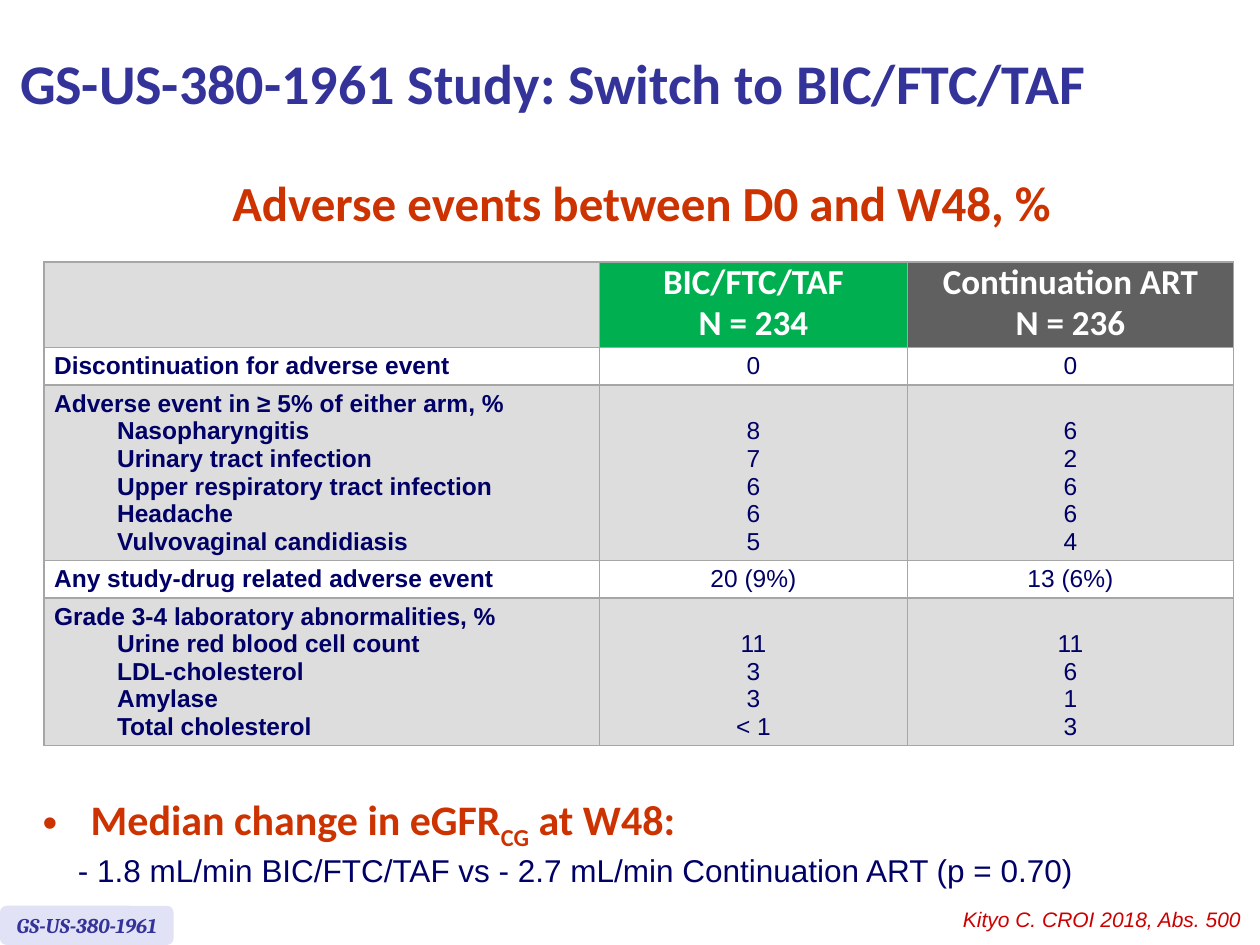
from dataclasses import dataclass
from typing import Any

from lxml.etree import SubElement
from pptx import Presentation
from pptx.dml.color import RGBColor
from pptx.enum.shapes import MSO_SHAPE as Preset
from pptx.enum.text import MSO_ANCHOR as Anchor, MSO_AUTO_SIZE as AutoSize, PP_ALIGN as Align
from pptx.oxml.ns import qn
from pptx.util import Cm, Pt

COLORS = {
    "title": "333399", "accent": "CC3300", "body": "000066", "citation": "CC0000",
    "tag": "E2E2F6", "border": "A6A6A6", "shade": "DDDDDD", "plain": "FFFFFF",
    "bictegravir": "00B050", "continuation": "606060",
}
FONTS = {
    "title": dict(name="Calibri", size=Pt(32), bold=True, color="title"),
    "heading": dict(name="Calibri", size=Pt(28), bold=True, color="accent"),
    "finding": dict(name="Calibri", size=Pt(24), bold=True, color="accent"),
    "detail": dict(name="Arial", size=Pt(18), bold=False, color="body"),
    "citation": dict(name="Arial", size=Pt(12), italic=True, color="citation"),
    "tag": dict(name="Cambria", size=Pt(12), bold=True, italic=True, color="title"),
    "arm": dict(name="Calibri", size=Pt(20), bold=True, color="plain"),
    "event": dict(name="Arial", size=Pt(14), bold=True, color="body"),
    "value": dict(name="Arial", size=Pt(14), bold=False, color="body"),
}


@dataclass
class Arm:
    name: str
    patients: int
    color: str


@dataclass
class EventGroup:
    label: str
    height: float
    fill: str
    events: tuple[str, ...]
    arm_values: tuple[tuple[str, ...], ...]


ARMS = [Arm("BIC/FTC/TAF", 234, "bictegravir"), Arm("Continuation ART", 236, "continuation")]
GROUPS = [
    EventGroup("Discontinuation for adverse event", 0.76, "plain", (), (("0",), ("0",))),
    EventGroup(
        "Adverse event in ≥ 5% of either arm, %", 3.4, "shade",
        ("Nasopharyngitis", "Urinary tract infection", "Upper respiratory tract infection",
         "Headache", "Vulvovaginal candidiasis"),
        (("8", "7", "6", "6", "5"), ("6", "2", "6", "6", "4"))),
    EventGroup("Any study-drug related adverse event", 0.76, "plain", (),
               (("20 (9%)",), ("13 (6%)",))),
    EventGroup(
        "Grade 3-4 laboratory abnormalities, %", 2.9, "shade",
        ("Urine red blood cell count", "LDL-cholesterol", "Amylase", "Total cholesterol"),
        (("11", "3", "3", "< 1"), ("11", "6", "1", "3"))),
]
COLUMN_WIDTHS = (11.2, 6.2, 6.58)
HEADER_HEIGHT = 1.4


def rgb(color: str) -> RGBColor:
    return RGBColor.from_string(COLORS[color])


def style(font: Any, role: str) -> None:
    for key, value in FONTS[role].items():
        if key == "color":
            font.color.rgb = rgb(value)
        else:
            setattr(font, key, value)


def write_lines(frame: Any, lines: tuple[str, ...], role: str, **paragraph_format: Any) -> list:
    """Write one paragraph per line, all in the same style, and return them."""
    paragraphs = []
    for index, line in enumerate(lines):
        paragraph = frame.add_paragraph() if index else frame.paragraphs[0]
        for key, value in paragraph_format.items():
            setattr(paragraph, key, value)
        run = paragraph.add_run()
        run.text = line
        style(run.font, role)
        paragraphs.append(paragraph)
    return paragraphs


def indent(paragraph: Any, left: float, first: float = 0, bullet: str = "") -> None:
    properties = paragraph._p.get_or_add_pPr()
    properties.set("marL", str(Cm(left)))
    properties.set("indent", str(Cm(first)))
    if bullet:
        SubElement(properties, qn("a:buFont"), typeface="Arial")
        SubElement(properties, qn("a:buChar"), char=bullet)


def add_text_frame(slide: Any, left: float, top: float, width: float, height: float) -> Any:
    frame = slide.shapes.add_textbox(Cm(left), Cm(top), Cm(width), Cm(height)).text_frame
    frame.word_wrap = True
    return frame


def format_cell(cell: Any, fill: str, anchor: Any = Anchor.MIDDLE) -> None:
    properties = cell._tc.get_or_add_tcPr()
    for side in ("lnL", "lnR", "lnT", "lnB"):
        line = SubElement(properties, qn(f"a:{side}"), w=str(Pt(1)))
        solid = SubElement(line, qn("a:solidFill"))
        SubElement(solid, qn("a:srgbClr"), val=COLORS["border"])
    cell.fill.solid()
    cell.fill.fore_color.rgb = rgb(fill)
    cell.vertical_anchor = anchor
    cell.margin_left = cell.margin_right = Cm(0.2)
    cell.margin_top = cell.margin_bottom = Cm(0.1)


def add_title(slide: Any) -> None:
    title = slide.shapes.title
    title.left, title.top, title.width, title.height = Cm(0.15), Cm(0.13), Cm(22.76), Cm(3.07)
    frame = title.text_frame
    frame.auto_size = AutoSize.NONE
    frame.vertical_anchor = Anchor.MIDDLE
    write_lines(frame, ("GS-US-380-1961 Study: Switch to BIC/FTC/TAF",), "title",
                alignment=Align.LEFT)


def add_events_table(slide: Any) -> None:
    graphic = slide.shapes.add_table(len(GROUPS) + 1, len(ARMS) + 1, Cm(0.89), Cm(5.28),
                                     Cm(sum(COLUMN_WIDTHS)), Cm(9.2))
    table = graphic.table
    table.first_row = table.horz_banding = False
    for column, width in zip(table.columns, COLUMN_WIDTHS):
        column.width = Cm(width)
    for row, height in zip(table.rows, [HEADER_HEIGHT, *(group.height for group in GROUPS)]):
        row.height = Cm(height)

    format_cell(table.cell(0, 0), "shade")
    for column, arm in enumerate(ARMS, start=1):
        cell = table.cell(0, column)
        format_cell(cell, arm.color)
        _, count = write_lines(cell.text_frame, (arm.name, f"N = {arm.patients}"), "arm",
                               alignment=Align.CENTER, line_spacing=0.8)
        count.space_before = Pt(4)

    for row, group in enumerate(GROUPS, start=1):
        label = table.cell(row, 0)
        format_cell(label, group.fill)
        _, *events = write_lines(label.text_frame, (group.label, *group.events), "event")
        for event in events:
            indent(event, 1.27)
        for column, values in enumerate(group.arm_values, start=1):
            cell = table.cell(row, column)
            # Bottom anchoring lines each value up with its event
            format_cell(cell, group.fill, Anchor.BOTTOM if events else Anchor.MIDDLE)
            write_lines(cell.text_frame, values, "value", alignment=Align.CENTER)


def add_egfr_finding(slide: Any) -> None:
    frame = add_text_frame(slide, 0.61, 15.88, 24.84, 2.06)
    finding = frame.paragraphs[0]
    indent(finding, 0.97, -0.97, "•")
    for text, baseline in (("Median change in eGFR", 0), ("CG", -25000), (" at W48:", 0)):
        run = finding.add_run()
        run.text = text
        style(run.font, "finding")
        if baseline:
            run.font._element.set("baseline", str(baseline))
    detail = frame.add_paragraph()
    indent(detail, 0.71)
    run = detail.add_run()
    run.text = "- 1.8 mL/min BIC/FTC/TAF vs - 2.7 mL/min Continuation ART (p = 0.70)"
    style(run.font, "detail")


def add_study_tag(slide: Any) -> None:
    tag = slide.shapes.add_shape(Preset.ROUNDED_RECTANGLE, 0, Cm(18.26), Cm(3.5), Cm(0.79))
    tag.shadow.inherit = False
    tag.fill.solid()
    tag.fill.fore_color.rgb = rgb("tag")
    tag.line.fill.background()
    tag.text_frame.word_wrap = False
    tag.text_frame.vertical_anchor = Anchor.MIDDLE
    write_lines(tag.text_frame, ("GS-US-380-1961",), "tag", alignment=Align.CENTER)


def main() -> None:
    deck = Presentation()
    deck.slide_width, deck.slide_height = Cm(25.4), Cm(19.05)
    slide = deck.slides.add_slide(deck.slide_layouts[5])
    add_title(slide)
    add_events_table(slide)
    add_egfr_finding(slide)
    write_lines(add_text_frame(slide, 16.38, 18.16, 8.89, 0.76),
                ("Kityo C. CROI 2018, Abs. 500",), "citation", alignment=Align.RIGHT)
    write_lines(add_text_frame(slide, 2.49, 4.01, 20.88, 0.91),
                ("Adverse events between D0 and W48, %",), "heading",
                alignment=Align.CENTER, line_spacing=Pt(15.2))
    add_study_tag(slide)
    deck.save("out.pptx")


if __name__ == "__main__":
    main()
